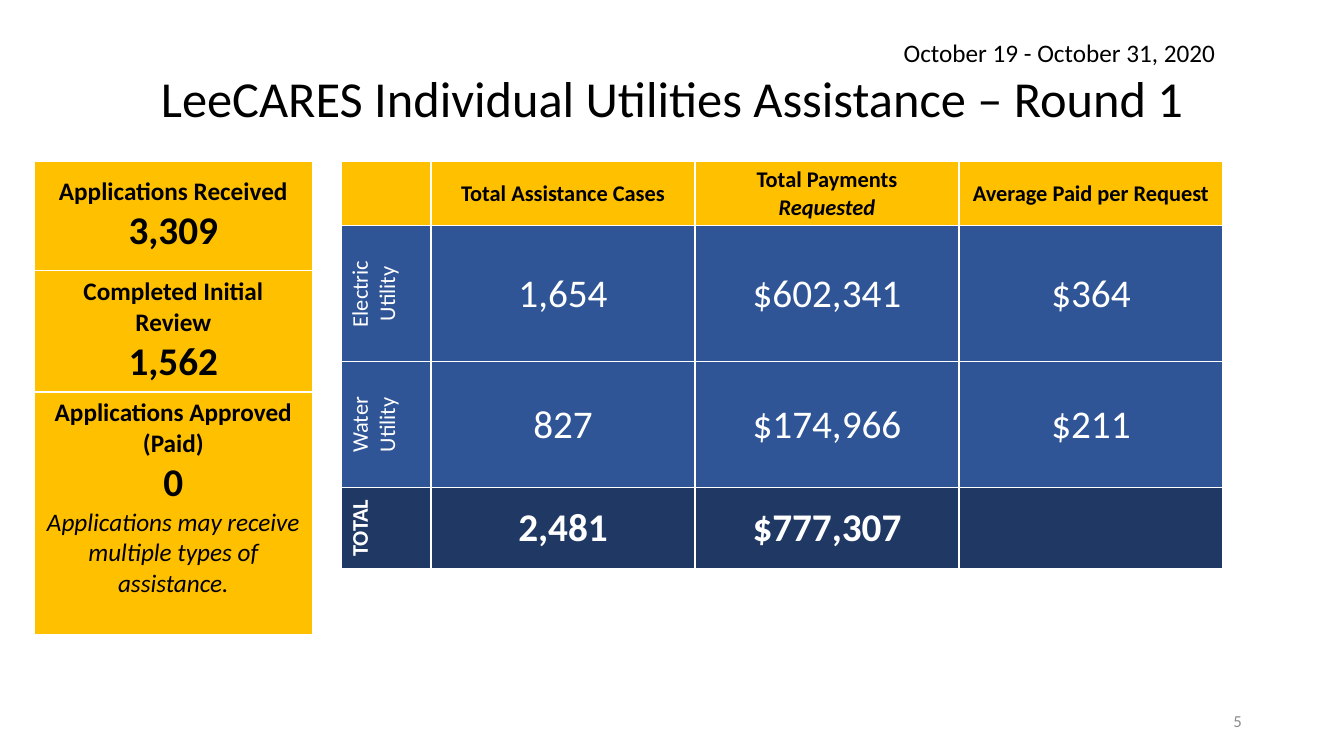
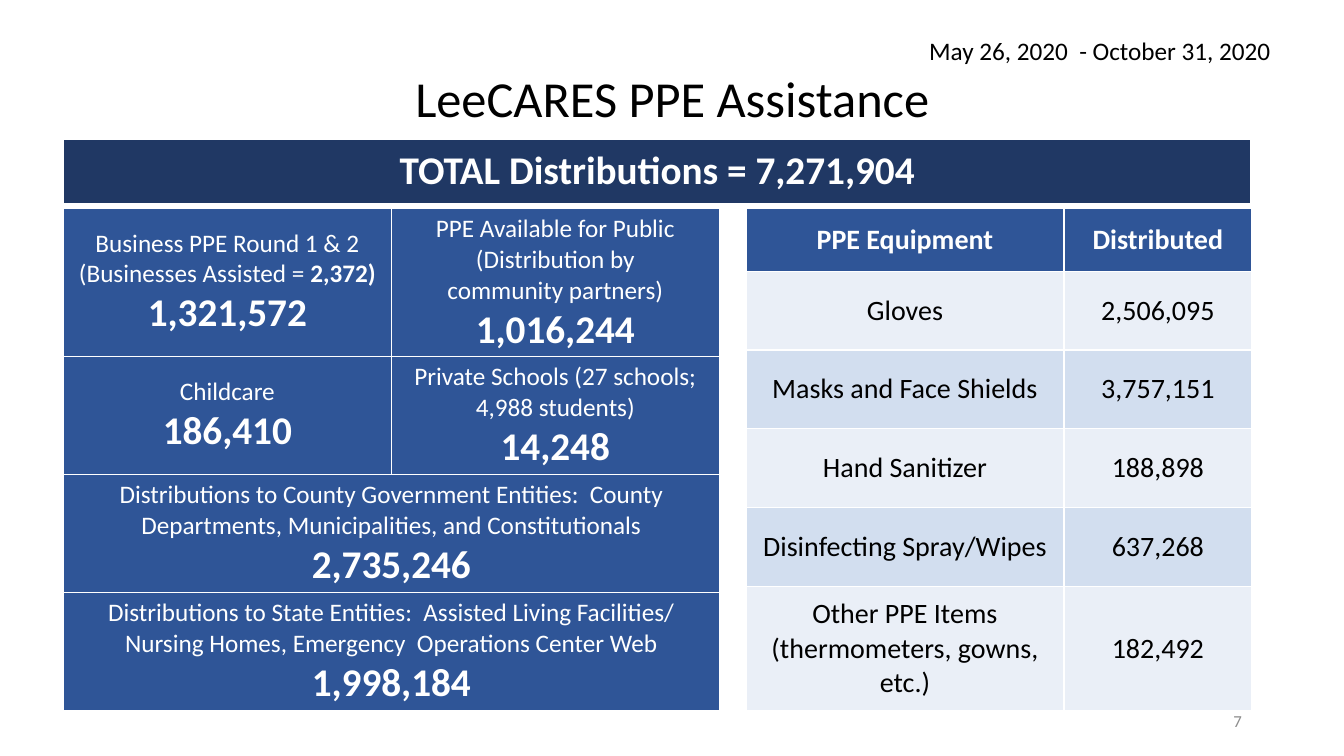
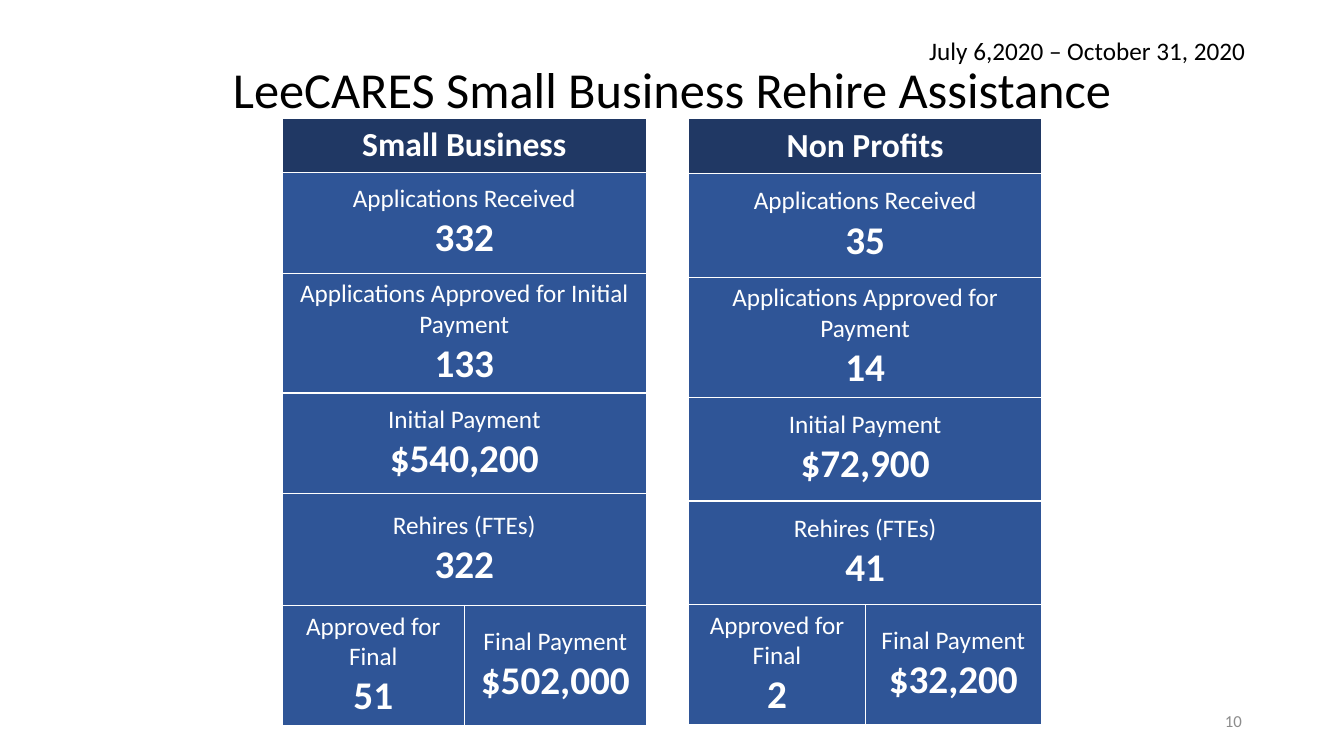
from dataclasses import dataclass
from lxml import etree
from pptx import Presentation
from pptx.dml.color import RGBColor
from pptx.enum.text import MSO_ANCHOR, PP_ALIGN
from pptx.oxml.ns import qn
from pptx.util import Inches, Pt

LEFT, CENTER, RIGHT = PP_ALIGN.LEFT, PP_ALIGN.CENTER, PP_ALIGN.RIGHT
TOP, MIDDLE = MSO_ANCHOR.TOP, MSO_ANCHOR.MIDDLE
SLIDE_WIDTH, SLIDE_HEIGHT = Inches(13.33), Inches(7.5)
COLUMN, ROW = SLIDE_WIDTH / 100, SLIDE_HEIGHT / 75
BLANK_LAYOUT = 6


class Theme:
    """Fonts, colours and type sizes shared by all slides."""
    font = "Calibri"
    border, border_width = "FFFFFF", Pt(1)
    black, grey = "000000", "8C8C8C"
    tones = {
        "gold": ("FFC000", "000000"),
        "blue": ("2F5597", "FFFFFF"),
        "navy": ("203864", "FFFFFF"),
        "pale": ("EAEFF7", "000000"),
        "tint": ("D2DEEF", "000000"),
    }
    styles = {
        "title": {"size": Pt(36)},
        "page": {"size": Pt(12)},
        "label": {"size": Pt(18)},
        "strong": {"size": Pt(18), "bold": True},
        "note": {"size": Pt(18), "italic": True},
        "figure": {"size": Pt(28)},
        "total": {"size": Pt(28), "bold": True},
        "banner": {"size": Pt(24), "bold": True},
        "item": {"size": Pt(20)},
        "item head": {"size": Pt(20), "bold": True},
        "side": {"size": Pt(16)},
        "head": {"size": Pt(16), "bold": True},
        "head note": {"size": Pt(16), "bold": True, "italic": True},
    }


@dataclass
class Cell:
    """Content of one table cell: paragraphs are lists of (text, style) runs."""
    tone: str
    paragraphs: list
    span: int = 1
    vertical: bool = False
    bottom: float = 0.05


def lines(tone, style, *texts, **options):
    """Return a cell whose lines all have one style."""
    return Cell(tone, [[(text, style)] for text in texts], **options)


def stat(label, value, tone="blue", style="label", **options):
    """Return a cell with a label above a bold number."""
    return Cell(tone, [[(text, style)] for text in label.split("\n")] + [[(value, "total")]], **options)


def place(box):
    """Turn a box in grid columns and rows into slide lengths."""
    left, top, width, height = box
    return int(left * COLUMN), int(top * ROW), int(width * COLUMN), int(height * ROW)


def write(frame, paragraphs, color, **settings):
    """Fill a text frame with paragraphs of styled runs."""
    for index, runs in enumerate(paragraphs):
        paragraph = frame.paragraphs[0] if index == 0 else frame.add_paragraph()
        for name, value in settings.items():
            setattr(paragraph, name, value)
        for text, style in runs:
            run = paragraph.add_run()
            run.text = text
            run.font.color.rgb = RGBColor.from_string(color)
            for name, value in {"name": Theme.font, **Theme.styles[style]}.items():
                setattr(run.font, name, value)


def add_text(slide, box, text, style, color=Theme.black, anchor=TOP, wrap=True, **settings):
    """Add one line of text in a box."""
    frame = slide.shapes.add_textbox(*place(box)).text_frame
    frame.word_wrap, frame.vertical_anchor = wrap, anchor
    write(frame, [[(text, style)]], color, **settings)


def add_borders(properties):
    """Draw the theme border on the four sides of a cell."""
    for side in ("a:lnL", "a:lnR", "a:lnT", "a:lnB"):
        line = etree.SubElement(properties, qn(side), w=str(Theme.border_width))
        fill = etree.SubElement(line, qn("a:solidFill"))
        etree.SubElement(fill, qn("a:srgbClr"), val=Theme.border)


def fill_cell(target, cell):
    """Apply colour, borders and text to a table cell."""
    background, ink = Theme.tones[cell.tone]
    properties = target._tc.get_or_add_tcPr()
    add_borders(properties)
    target.fill.solid()
    target.fill.fore_color.rgb = RGBColor.from_string(background)
    target.vertical_anchor = MIDDLE
    target.margin_bottom = Inches(cell.bottom)
    if cell.vertical:
        properties.set("vert", "vert270")
    write(target.text_frame, cell.paragraphs, ink, alignment=CENTER)


def add_grid(slide, box, widths, heights, rows):
    """Add a table whose columns and rows share the box by weight."""
    left, top, width, height = place(box)
    table = slide.shapes.add_table(len(heights), len(widths), left, top, width, height).table
    table.first_row = table.horz_banding = False
    for column, weight in zip(table.columns, widths):
        column.width = int(width * weight / sum(widths))
    for row, weight in zip(table.rows, heights):
        row.height = int(height * weight / sum(heights))
    for row_index, cells in enumerate(rows):
        column_index = 0
        for cell in cells:
            target = table.cell(row_index, column_index)
            if cell.span > 1:
                target.merge(table.cell(row_index, column_index + cell.span - 1))
            fill_cell(target, cell)
            column_index += cell.span


def add_page(presentation, title, dates, dates_box, number, title_box=(6.9, 4, 86.25, 12)):
    """Add a slide with its title, date range and page number."""
    slide = presentation.slides.add_slide(presentation.slide_layouts[BLANK_LAYOUT])
    add_text(slide, title_box, title, "title", anchor=MIDDLE, alignment=CENTER, line_spacing=0.9)
    add_text(slide, dates_box, dates, "label", wrap=False, alignment=LEFT)
    add_text(slide, (70.65, 69.5, 22.5, 4), number, "page", Theme.grey, MIDDLE, alignment=RIGHT)
    return slide


def add_utilities(presentation):
    """Add the utilities slide."""
    slide = add_page(presentation, "LeeCARES Individual Utilities Assistance – Round 1",
                     "October 19 - October 31, 2020", (66.5, 3.2, 25, 4), "5")
    approved = stat("Applications Approved (Paid)", "0", "gold", "strong", bottom=0.35)
    approved.paragraphs.append([("Applications may receive multiple types of assistance.", "note")])
    add_grid(slide, (2.55, 16, 20.7, 47), [1], [1.08, 1.21, 2.41], [
        [stat("Applications Received", "3,309", "gold", "strong")],
        [stat("Completed Initial Review", "1,562", "gold", "strong")],
        [approved],
    ])
    payments = Cell("gold", [[("Total Payments", "head")], [("Requested", "head note")]])
    rows = [[lines("gold", "head"), lines("gold", "head", "Total Assistance Cases"), payments,
             lines("gold", "head", "Average Paid per Request")]]
    for tone, side_style, style, names, values in (
        ("blue", "side", "figure", ("Electric", "Utility"), ("1,654", "$602,341", "$364")),
        ("blue", "side", "figure", ("Water", "Utility"), ("827", "$174,966", "$211")),
        ("navy", "head", "total", ("TOTAL",), ("2,481", "$777,307")),
    ):
        rows.append([lines(tone, side_style, *names, vertical=True)]
                    + [lines(tone, style, value) for value in values])
    rows[-1].append(lines("navy", "total"))
    add_grid(slide, (25.4, 16, 65.6, 40.4), [0.89, 2.62, 2.62, 2.62], [0.64, 1.35, 1.25, 0.8], rows)


def add_equipment(presentation):
    """Add the protective equipment slide."""
    slide = add_page(presentation, "LeeCARES PPE Assistance",
                     "May 26, 2020  - October 31, 2020", (68.4, 3, 28.2, 4), "7")
    business = Cell("blue", [
        [("Business PPE Round 1 & 2", "label")],
        [("(Businesses Assisted = ", "label"), ("2,372)", "strong")],
        [("1,321,572", "total")],
    ])
    public = stat("PPE Available for Public\n(Distribution by\ncommunity partners)", "1,016,244")
    county = ("Distributions to County Government Entities:  County Departments, "
              "Municipalities, and Constitutionals")
    state = ("Distributions to State Entities:  Assisted Living Facilities/ "
             "Nursing Homes, Emergency  Operations Center Web")
    add_grid(slide, (4.72, 20.7, 48.8, 49.8), [1, 1], [1.47, 1.17, 1.17, 1.17], [
        [business, public],
        [stat("Childcare", "186,410"),
         stat("Private Schools (27 schools; 4,988 students)", "14,248")],
        [stat(county, "2,735,246", span=2)],
        [stat(state, "1,998,184", span=2)],
    ])
    items = [
        ("Gloves", "2,506,095"),
        ("Masks and Face Shields", "3,757,151"),
        ("Hand Sanitizer", "188,898"),
        ("Disinfecting Spray/Wipes", "637,268"),
        ("Other PPE Items\n(thermometers, gowns, etc.)", "182,492"),
    ]
    rows = [[lines("blue", "item head", text) for text in ("PPE Equipment", "Distributed")]]
    for index, (name, count) in enumerate(items):
        tone = ("pale", "tint")[index % 2]
        rows.append([lines(tone, "item", *name.split("\n")), lines(tone, "item", count)])
    add_grid(slide, (55.5, 20.7, 37.65, 49.8), [3.15, 1.86], [0.62] + [0.78] * 4 + [1.23], rows)
    add_grid(slide, (4.72, 13.8, 88.35, 6.4), [1], [1],
             [[lines("navy", "total", "TOTAL Distributions = 7,271,904")]])


def add_rehire_group(slide, box, heights, name, approval, values):
    """Add the column of results for one kind of employer."""
    labels = ("Applications Received", approval, "Initial Payment", "Rehires (FTEs)")
    rows = [[lines("navy", "banner", name, span=2)]]
    rows += [[stat(label, value, span=2)] for label, value in zip(labels, values)]
    rows.append([stat("Approved for Final", values[4]), stat("Final Payment", values[5])])
    add_grid(slide, box, [1, 1], heights, rows)


def add_rehire(presentation):
    """Add the rehire slide."""
    slide = add_page(presentation, "LeeCARES Small Business Rehire Assistance",
                     "July 6,2020 – October 31, 2020", (68.4, 3, 25.3, 4), "10",
                     (6.9, 2.2, 86.25, 13.8))
    add_rehire_group(slide, (21, 11.7, 27.1, 60.3), [0.54, 1, 1.19, 1, 1.11, 1.19],
                     "Small Business", "Applications Approved for Initial Payment",
                     ("332", "133", "$540,200", "322", "51", "$502,000"))
    add_rehire_group(slide, (51.25, 11.7, 26.25, 60.2), [0.55, 1.03, 1.19, 1.03, 1.03, 1.19],
                     "Non Profits", "Applications Approved for Payment",
                     ("35", "14", "$72,900", "41", "2", "$32,200"))


def main():
    """Build and save the presentation."""
    presentation = Presentation()
    presentation.slide_width, presentation.slide_height = SLIDE_WIDTH, SLIDE_HEIGHT
    for add_slide in (add_utilities, add_equipment, add_rehire):
        add_slide(presentation)
    presentation.save("out.pptx")


if __name__ == "__main__":
    main()
